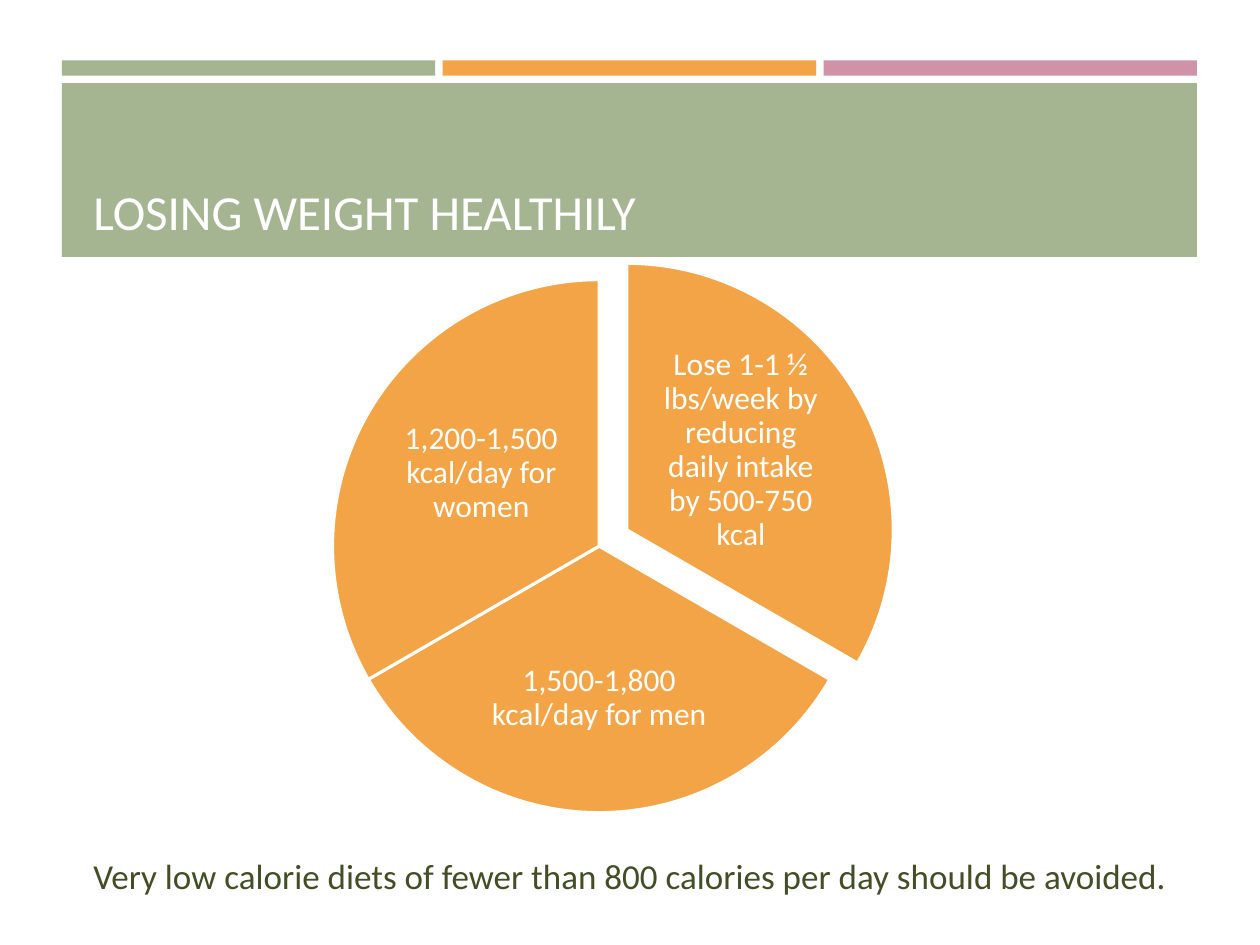
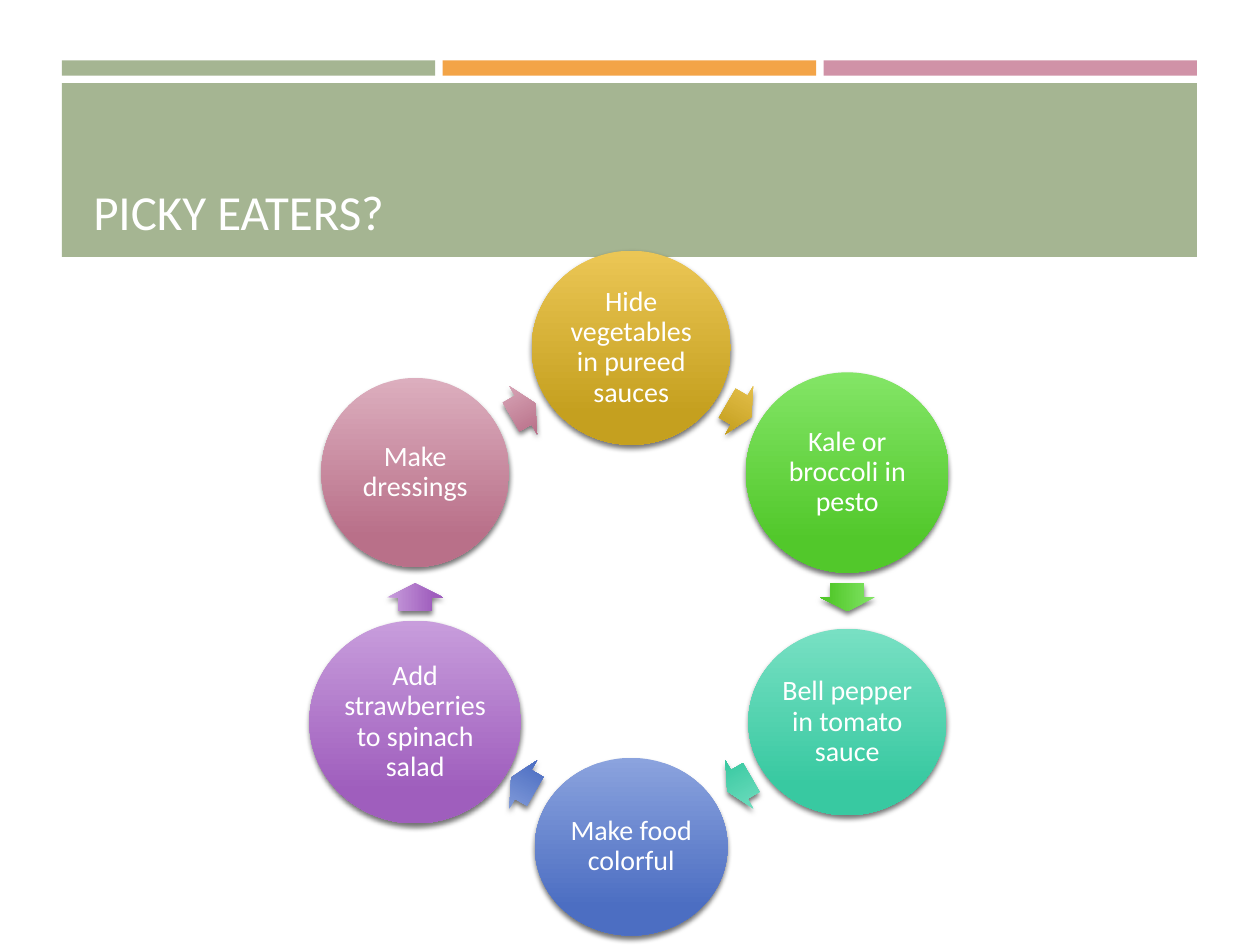
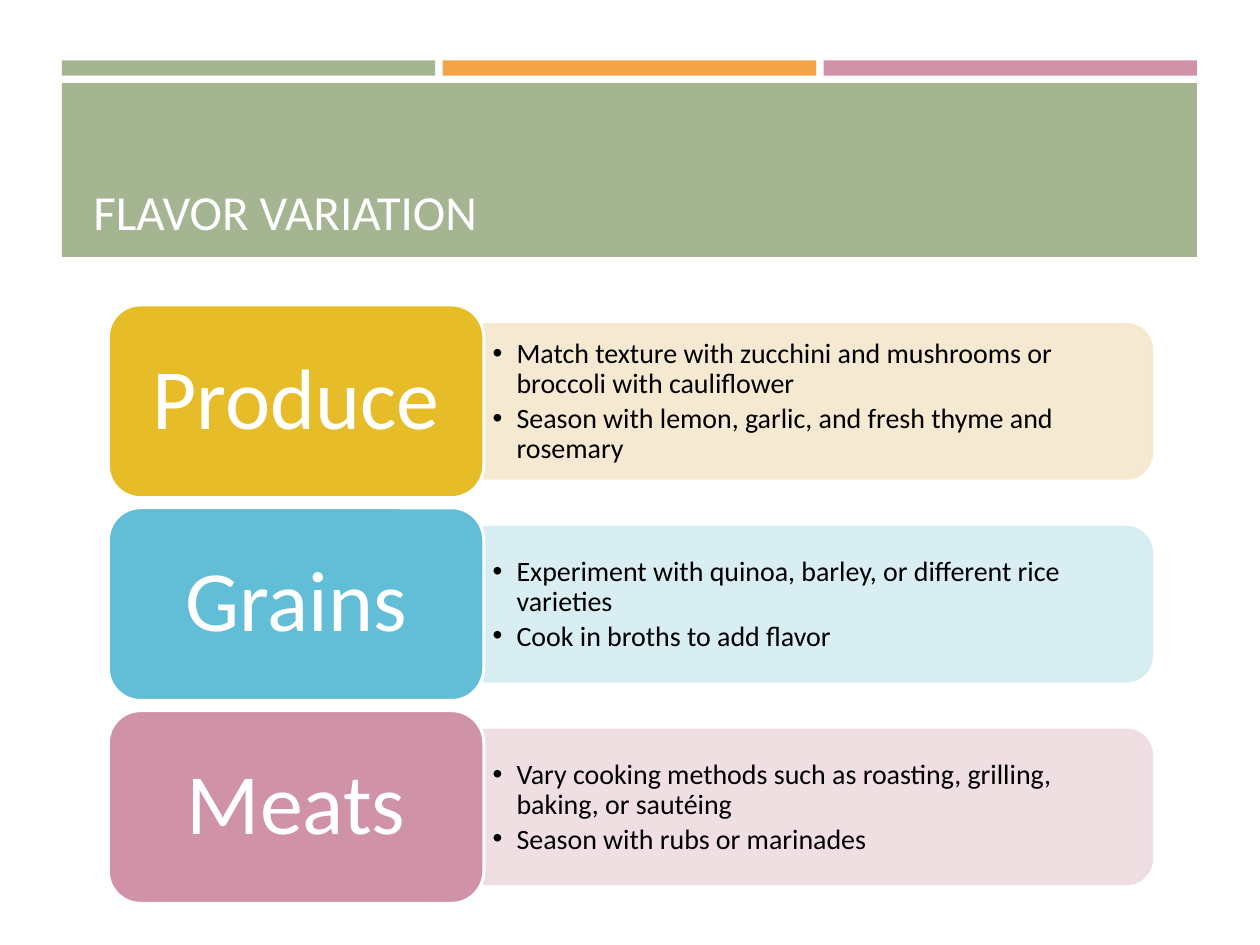
from math import cos, radians, sin

from lxml import etree
from pptx import Presentation
from pptx.dml.color import RGBColor
from pptx.enum.shapes import MSO_SHAPE
from pptx.enum.text import MSO_ANCHOR, MSO_AUTO_SIZE, PP_ALIGN
from pptx.oxml.ns import qn
from pptx.util import Inches, Pt

RECT, ELLIPSE, PIE = MSO_SHAPE.RECTANGLE, MSO_SHAPE.OVAL, MSO_SHAPE.PIE
ARROW, ROUNDED = MSO_SHAPE.RIGHT_ARROW, MSO_SHAPE.ROUNDED_RECTANGLE
TWO_ROUND = MSO_SHAPE.ROUND_2_SAME_RECTANGLE
LEFT, CENTER = PP_ALIGN.LEFT, PP_ALIGN.CENTER
TOP, MIDDLE, BOTTOM = MSO_ANCHOR.TOP, MSO_ANCHOR.MIDDLE, MSO_ANCHOR.BOTTOM
NO_AUTOFIT = MSO_AUTO_SIZE.NONE

FONT = "Calibri"
SAGE, ORANGE, ROSE = "A5B592", "F3A447", "D092A7"
WHITE, BLACK, OLIVE = "FFFFFF", "000000", "444D26"
TITLE_ONLY, TITLE_AND_BODY = 5, 1

BAND_LEFT, BAND_WIDTH, BAND_GAP = 0.49, 9.01, 0.06

PIE_SIZE = 4.23
PIE_SLICES = [
    ("Lose 1-1 ½ lbs/week by reducing daily intake by 500-750 kcal",
     (2.86, 2.09), (162, 18), (5.16, 2.87, 1.44, 1.41)),
    ("1,500-1,800 kcal/day for men",
     (2.64, 2.22), (18, 90), (3.8, 4.89, 1.91, 1.31)),
    ("1,200-1,500 kcal/day for women",
     (2.64, 2.22), (90, 162), (3.1, 3.05, 1.44, 1.41)),
]

RING_X, RING_Y, RING_RADIUS = 5.01, 4.74, 1.98
RING_IDEAS = [
    ("Hide vegetables in pureed sauces", 1.58, 1.54, "EBC655", "C5A01F"),
    ("Kale or broccoli in pesto", 1.61, 1.59, "83E566", "52C82B"),
    ("Bell pepper in tomato sauce", 1.57, 1.48, "78E0C3", "38C9A1"),
    ("Make food colorful", 1.53, 1.41, "8BA3DE", "4C6EC2"),
    ("Add strawberries to spinach salad", 1.68, 1.61, "C89DDC", "9F5EBD"),
    ("Make dressings", 1.49, 1.5, "DCAEBE", "B97089"),
]

ROW_TOP, ROW_PITCH = 2.42, 1.61
FOOD_ROWS = [
    ("Produce", "E7BC29", "F6E7CD",
     ["Match texture with zucchini and mushrooms or broccoli with cauliflower",
      "Season with lemon, garlic, and fresh thyme and rosemary"]),
    ("Grains", "62BED7", "D5EDF1",
     ["Experiment with quinoa, barley, or different rice varieties",
      "Cook in broths to add flavor"]),
    ("Meats", ROSE, "EEDCE1",
     ["Vary cooking methods such as roasting, grilling, baking, or sautéing",
      "Season with rubs or marinades"]),
]


def rgb(value):
    """Turn a hex string into a colour."""
    return RGBColor.from_string(value)


def place(shape, left, top, width, height):
    """Move and size a shape in inches."""
    shape.left, shape.top = Inches(left), Inches(top)
    shape.width, shape.height = Inches(width), Inches(height)


def set_bullet(paragraph, char, indent):
    """Give a paragraph a hanging bullet, or a plain indent without one."""
    properties = paragraph._p.get_or_add_pPr()
    properties.set("marL", str(Inches(indent)))
    properties.set("indent", str(-Inches(indent) if char else 0))
    if char:
        etree.SubElement(properties, qn("a:buFont"), typeface="Arial")
        etree.SubElement(properties, qn("a:buChar"), char=char)
    else:
        etree.SubElement(properties, qn("a:buNone"))


def write(frame, lines, size, color, align=CENTER, anchor=MIDDLE,
          insets=(0.03, 0.03), spacing=0.9, bullet=None, indent=None, after=0):
    """Fill a text frame with one formatted run per paragraph."""
    frame.word_wrap = True
    frame.auto_size = NO_AUTOFIT
    frame.vertical_anchor = anchor
    frame.margin_left = frame.margin_right = Inches(insets[0])
    frame.margin_top = frame.margin_bottom = Inches(insets[1])
    for index, line in enumerate(lines):
        paragraph = frame.paragraphs[0] if index == 0 else frame.add_paragraph()
        if indent is not None:
            set_bullet(paragraph, bullet, indent)
        paragraph.alignment = align
        paragraph.line_spacing = spacing
        paragraph.space_before = Pt(0)
        paragraph.space_after = Pt(after)
        run = paragraph.add_run()
        run.text = line
        run.font.name, run.font.size = FONT, Pt(size)
        run.font.color.rgb = rgb(color)


def add_text(slide, box, lines, size, color, **style):
    """Add a text box."""
    label = slide.shapes.add_textbox(*map(Inches, box))
    write(label.text_frame, lines, size, color, **style)


def add_solid(slide, kind, box, fill, line=None):
    """Add a flat preset shape with an optional outline."""
    shape = slide.shapes.add_shape(kind, *map(Inches, box))
    shape.shadow.inherit = False
    shape.fill.solid()
    shape.fill.fore_color.rgb = rgb(fill)
    if line:
        shape.line.color.rgb = rgb(line)
        shape.line.width = Pt(1.75)
    else:
        shape.line.fill.background()
    return shape


def add_glossy(slide, kind, center, size, light, dark):
    """Add a centred shape with a downward gradient and a soft shadow."""
    (x, y), (width, height) = center, size
    box = (x - width / 2, y - height / 2, width, height)
    shape = add_solid(slide, kind, box, light)
    shape.fill.gradient()
    shape.fill.gradient_angle = 270
    for stop, position, color in zip(shape.fill.gradient_stops, (0, 0.84), (light, dark)):
        stop.position = position
        stop.color.rgb = rgb(color)
    effects = shape.element.spPr.find(qn("a:effectLst"))
    shadow = etree.SubElement(effects, qn("a:outerShdw"), blurRad=str(Pt(3)),
                              dist=str(Pt(2)), dir="5400000", rotWithShape="0")
    shade = etree.SubElement(shadow, qn("a:srgbClr"), val=BLACK)
    etree.SubElement(shade, qn("a:alpha"), val="55000")
    return shape


def add_bands(prs, slide):
    """Draw the header bands and move them behind the master's placeholders."""
    width = (BAND_WIDTH - 2 * BAND_GAP) / 3
    bands = [add_solid(slide, RECT, (BAND_LEFT, 0.66, BAND_WIDTH, 1.38), SAGE)]
    for column, color in enumerate((SAGE, ORANGE, ROSE)):
        left = BAND_LEFT + column * (width + BAND_GAP)
        bands.append(add_solid(slide, RECT, (left, 0.48, width, 0.12), color))
    for band in bands:
        prs.slide_master.shapes.element.insert(2, band.element)


def add_titled_slide(prs, title, layout=TITLE_ONLY):
    """Add a slide with its title set in the header band."""
    slide = prs.slides.add_slide(prs.slide_layouts[layout])
    place(slide.shapes.title, 0.64, 0.75, 8.74, 1.18)
    write(slide.shapes.title.text_frame, [title], 28, WHITE, align=LEFT,
          anchor=BOTTOM, insets=(0.1, 0.02))
    return slide


def add_slice(slide, label, corner, angles, label_box):
    """Add one pie slice and its label."""
    wedge = add_solid(slide, PIE, (*corner, PIE_SIZE, PIE_SIZE), ORANGE, WHITE)
    wedge.adjustments[0], wedge.adjustments[1] = angles
    add_text(slide, label_box, [label], 18, WHITE)


def ring_point(angle, radius):
    """Give the point of the ring at a clockwise angle from the top."""
    turn = radians(angle)
    return RING_X + radius * sin(turn), RING_Y - radius * cos(turn)


def add_ring(slide, ideas):
    """Add circles around a ring, each followed by an arrow to the next."""
    step = 360 / len(ideas)
    for index, (idea, width, height, light, dark) in enumerate(ideas):
        angle = index * step
        circle = add_glossy(slide, ELLIPSE, ring_point(angle, RING_RADIUS),
                            (width, height), light, dark)
        write(circle.text_frame, [idea], 16, WHITE, insets=(0.02, 0.02))
        midway = ring_point(angle + step / 2, RING_RADIUS * cos(radians(step / 2)))
        arrow = add_glossy(slide, ARROW, midway, (0.22, 0.44), light, dark)
        arrow.adjustments[0], arrow.adjustments[1] = 0.6, 0.5
        arrow.rotation = angle + step / 2


def add_food_row(slide, top, food, color, tint, tips):
    """Add a food tab with a tinted panel of tips on its right."""
    left, width, height, length, depth = 0.86, 2.98, 1.53, 5.3, 1.22
    edge, middle = left + width, top + height / 2
    panel_box = (edge + (length - depth) / 2, middle - length / 2, depth, length)
    panel = add_solid(slide, TWO_ROUND, panel_box, tint, tint)
    panel.rotation = 90
    for shade in panel.element.spPr.iter(qn("a:srgbClr")):
        etree.SubElement(shade, qn("a:alpha"), val="90000")
    add_text(slide, (edge, middle - 0.55, 5.24, 1.11), tips, 16, BLACK, align=LEFT,
             insets=(0.07, 0.03), bullet="•", indent=0.19, after=2.4)
    tab = add_solid(slide, ROUNDED, (left, top, width, height), color, WHITE)
    write(tab.text_frame, [food], 49, WHITE, insets=(0.2, 0.1))


def main():
    """Build the three slides."""
    prs = Presentation()
    prs.slide_width, prs.slide_height = Inches(10), Inches(7.5)

    weight = add_titled_slide(prs, "LOSING WEIGHT HEALTHILY", TITLE_AND_BODY)
    add_bands(prs, weight)
    warning = weight.placeholders[1]
    place(warning, 0.29, 6.73, 9.08, 0.68)
    write(warning.text_frame,
          ["Very low calorie diets of fewer than 800 calories per day should be avoided."],
          20, OLIVE, align=LEFT, anchor=TOP, insets=(0.1, 0.05), spacing=1, indent=0.35)
    for pie_slice in PIE_SLICES:
        add_slice(weight, *pie_slice)

    add_ring(add_titled_slide(prs, "PICKY EATERS?"), RING_IDEAS)

    flavor = add_titled_slide(prs, "FLAVOR VARIATION")
    for row, content in enumerate(FOOD_ROWS):
        add_food_row(flavor, ROW_TOP + row * ROW_PITCH, *content)

    prs.save("out.pptx")


if __name__ == "__main__":
    main()
